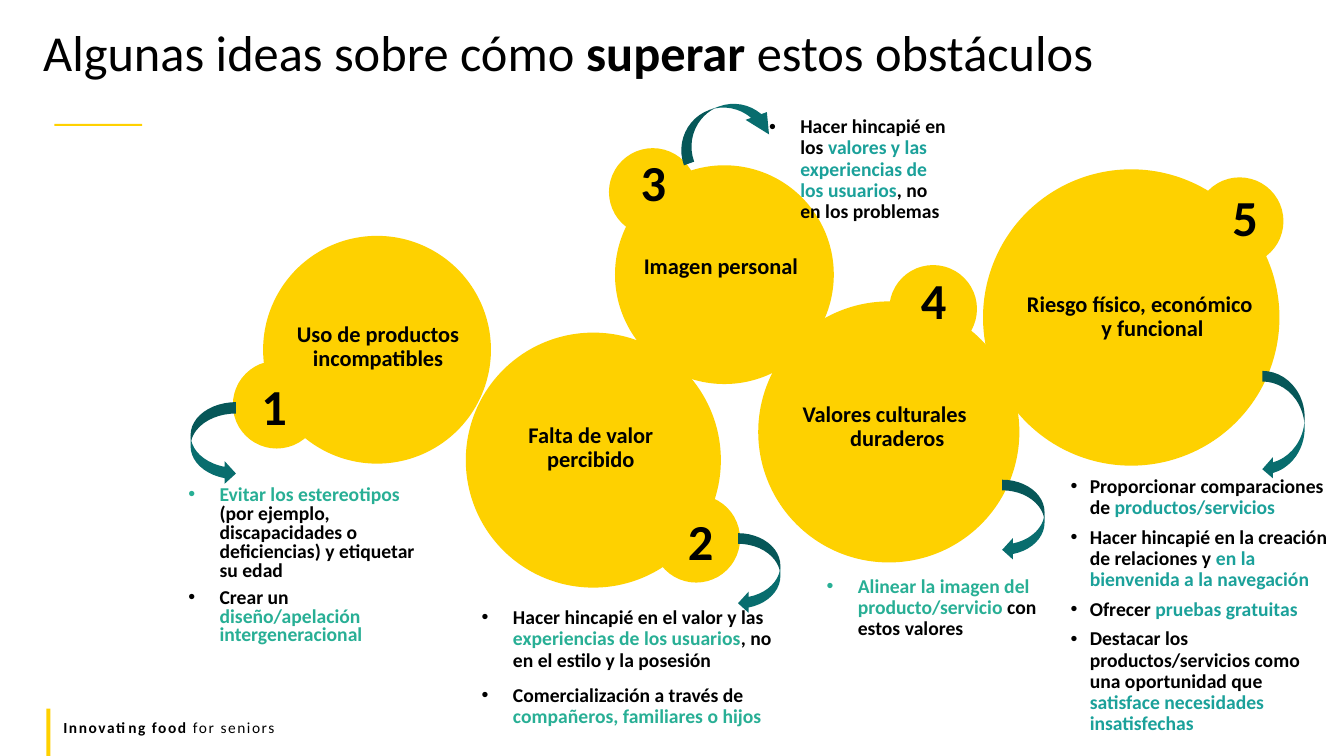
from pptx import Presentation
from pptx.dml.color import RGBColor as RGB
from pptx.enum.shapes import MSO_SHAPE as Kind
from pptx.enum.text import PP_ALIGN as Align
from pptx.oxml.ns import qn
from pptx.util import Inches, Pt
from lxml.etree import SubElement as Sub

YELLOW = RGB(0xFE, 0xD1, 0x00)
GOLD = RGB(0xFF, 0xD1, 0x00)
BLACK = RGB(0, 0, 0)
TEAL = RGB(0x08, 0x6D, 0x6E)
GREEN = RGB(0x28, 0xAF, 0x95)
AQUA = RGB(0x1B, 0xA1, 0x9A)
BADGE = 0.87

DISCS = [
    (2.61, 2.34, 2.26), (9.75, 1.68, 2.94), (6.1, 1.64, 2.17),
    (4.62, 3.3, 2.53), (7.52, 2.99, 2.59),
]
BADGES = [(2.31, 3.58), (6.47, 4.91), (6.04, 1.47), (8.82, 2.63), (11.86, 1.76)]
DIGITS = [(2.34, 3.74), (6.57, 5.08), (6.1, 1.52), (8.88, 2.69), (11.97, 1.87)]
LABELS = [
    ((2.81, 3.16, 1.88, 0.48), "Uso de productos incompatibles", 0),
    ((4.92, 4.16, 1.88, 0.48), "Falta de valor percibido", 0),
    ((6.2, 2.48, 1.9, 0.35), "Imagen personal", 0.25),
    ((7.61, 3.95, 2.33, 0.39), "Valores culturales duraderos", 0.25),
    ((10.03, 2.86, 2.55, 0.44), "Riesgo físico, económico y funcional", 0.25),
]
ARROWS = [
    ((1.89, 3.99, 0.45, 0.82), None),
    ((7.32, 5.29, 0.42, 0.8), "flipH"),
    ((9.94, 4.76, 0.42, 0.8), "flipH"),
    ((12.52, 3.68, 0.42, 1.08), "flipH"),
]
IDEAS = [
    ((1.77, 4.78, 2.6, 1.69), GREEN, 0.31, 0.8, 6, [
        "|Evitar los estereotipos |(por ejemplo, discapacidades o deficiencias) y etiquetar su edad",
        "Crear un |diseño/apelación intergeneracional",
    ]),
    ((4.68, 5.98, 3.27, 1.19), GREEN, 0.31, 0.9, 10, [
        "Hacer hincapié en el valor y las |experiencias de los usuarios|, no en el estilo y la posesión",
        "Comercialización a través de |compañeros, familiares o hijos",
    ]),
    ((7.53, 1.11, 1.99, 0.88), AQUA, 0.31, 0.9, 10, [
        "Hacer hincapié en los |valores y las experiencias de los usuarios|, no en los problemas",
    ]),
    ((8.1, 5.67, 2.44, 1.01), GREEN, 0.31, 0.9, 10, [
        "|Alinear la imagen del producto/servicio |con estos valores",
    ]),
    ((10.52, 4.68, 2.8, 1.6), AQUA, 0.19, 0.9, 6, [
        "Proporcionar comparaciones de |productos/servicios",
        "Hacer hincapié en la creación de relaciones y |en la bienvenida a la navegación",
        "Ofrecer |pruebas gratuitas",
        "Destacar los productos/servicios como una oportunidad que |satisface necesidades insatisfechas",
    ]),
]


def add_shape(slide, kind, box, fill):
    """Add a plain filled shape."""
    shape = slide.shapes.add_shape(kind, *map(Inches, box))
    shape.shadow.inherit = False
    shape.fill.solid()
    shape.fill.fore_color.rgb = fill
    shape.line.fill.background()
    return shape


def add_arrow(slide, box, flip):
    """Add a curved arrow, mirrored when a flip is named."""
    arrow = add_shape(slide, Kind.CURVED_RIGHT_ARROW, box, TEAL)
    if flip:
        arrow.element.spPr.find(qn("a:xfrm")).set(flip, "1")
    return arrow


def add_frame(slide, box):
    """Add a wrapping text box and return its frame."""
    frame = slide.shapes.add_textbox(*map(Inches, box)).text_frame
    frame.word_wrap = True
    return frame


def set_para(para, size, bold=None, lead=None, hang=0, mark=False):
    """Set the font, line spacing, hanging indent and bullet of a paragraph."""
    props = para._p.get_or_add_pPr()
    if hang:
        props.set("marL", str(Inches(hang)))
        props.set("indent", str(-Inches(hang)))
    if mark:
        Sub(props, qn("a:buFont")).set("typeface", "Arial")
        Sub(props, qn("a:buChar")).set("char", "•")
    if lead:
        para.line_spacing = lead
    para.font.name = "Calibri"
    para.font.size = Pt(size)
    para.font.bold = bold
    para.font.color.rgb = BLACK


def add_runs(para, text, tint=None):
    """Add runs split at bars, with every second one tinted or bold."""
    for idx, part in enumerate(text.split("|")):
        if part:
            run = para.add_run()
            run.text = part
            if idx % 2 and tint:
                run.font.color.rgb = tint
            elif idx % 2:
                run.font.bold = True


def add_line(slide, box, text, size, bold=None, lead=None, hang=0, align=None):
    """Add a box with one paragraph."""
    para = add_frame(slide, box).paragraphs[0]
    set_para(para, size, bold, lead, hang)
    para.alignment = align
    add_runs(para, text)
    return para


def add_ideas(slide, box, tint, hang, lead, gap, items):
    """Add a bulleted list with tinted key words."""
    frame = add_frame(slide, box)
    for idx, item in enumerate(items):
        para = frame.add_paragraph() if idx else frame.paragraphs[0]
        set_para(para, 14, True, lead, hang, True)
        if idx:
            para.space_before = Pt(gap)
        add_runs(para, item, tint)


def main():
    """Build and save the slide."""
    deck = Presentation()
    deck.slide_width, deck.slide_height = Inches(13.33), Inches(7.5)
    slide = deck.slides.add_slide(deck.slide_layouts[6])

    add_shape(slide, Kind.RECTANGLE, (0.54, 1.23, 0.87, 0.02), GOLD)
    for left, top, size in DISCS + [(*spot, BADGE) for spot in BADGES]:
        add_shape(slide, Kind.OVAL, (left, top, size, size), YELLOW)

    foot = add_line(slide, (0.53, 7.07, 12, 0.29), "|Innovating food |for seniors", 11)
    for run in foot.runs:
        run._r.get_or_add_rPr().set("spc", "110")
    add_shape(slide, Kind.RECTANGLE, (0.46, 7.03, 0.04, 0.47), GOLD)
    add_line(slide, (0.33, 0.28, 11.74, 0.64),
             "Algunas ideas sobre cómo |superar| estos obstáculos", 36, lead=0.8)

    for num, spot in enumerate(DIGITS, 1):
        add_line(slide, (*spot, 0.76, 0.8), str(num), 36, True, 0.9, 0.25, Align.CENTER)
    for box, text, hang in LABELS:
        add_line(slide, box, text, 16, True, 0.9, hang, Align.CENTER)

    for box, flip in ARROWS:
        add_arrow(slide, box, flip)
    bent = add_arrow(slide, (6.97, 0.76, 0.43, 1.01), "flipV")
    bent.rotation = 70
    for idx, value in enumerate((0.25, 0.523, 0.5)):
        bent.adjustments[idx] = value

    for idea in IDEAS:
        add_ideas(slide, *idea)
    deck.save("out.pptx")


if __name__ == "__main__":
    main()
